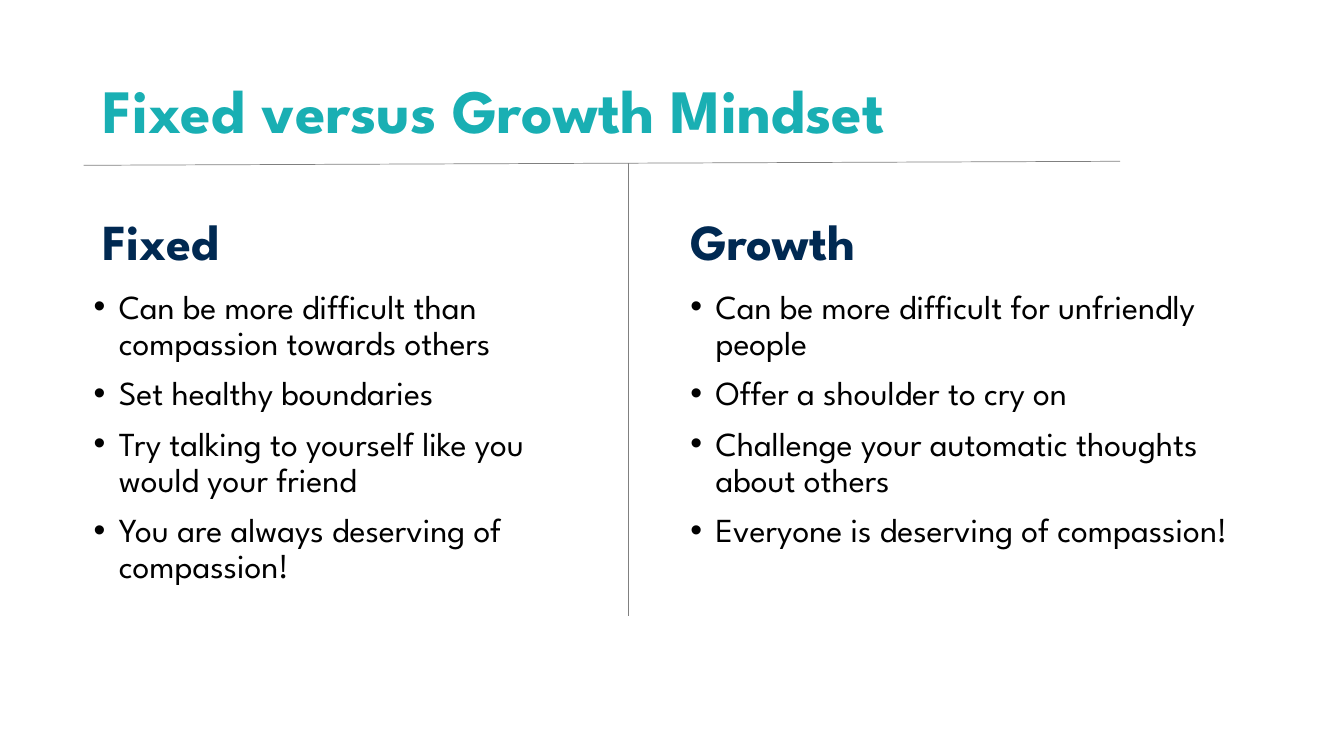
from dataclasses import dataclass

from lxml.etree import SubElement
from pptx import Presentation
from pptx.dml.color import RGBColor
from pptx.enum.shapes import MSO_CONNECTOR
from pptx.enum.text import MSO_ANCHOR
from pptx.oxml.ns import qn
from pptx.slide import Slide
from pptx.util import Inches, Pt

TEAL = RGBColor(0x19, 0xAF, 0xB3)
NAVY = RGBColor(0x00, 0x29, 0x52)
BLACK = RGBColor(0x00, 0x00, 0x00)
GRAY = RGBColor(0x80, 0x80, 0x80)
FONT = "League Spartan"
INDENT = Inches(0.25)

TITLE = {"size": Pt(44), "bold": True}
HEADING = {"size": Pt(36), "bold": True}
BODY = {"size": Pt(24), "bold": False}


@dataclass
class TextBlock:
    box: tuple[float, float, float, float]
    lines: list[str]
    font: dict
    color: RGBColor
    anchor: MSO_ANCHOR
    space_before: float = 10
    bulleted: bool = False


@dataclass
class Rule:
    start: tuple[float, float]
    end: tuple[float, float]


BLOCKS = [
    TextBlock((0.92, 0.4, 11.5, 1.45), ["Fixed versus Growth Mindset"],
              TITLE, TEAL, MSO_ANCHOR.MIDDLE, space_before=0),
    TextBlock((0.92, 1.84, 5.64, 0.9), ["Fixed"], HEADING, NAVY, MSO_ANCHOR.BOTTOM),
    TextBlock((0.83, 2.83, 5.06, 3.29), [
        "Can be more difficult than compassion towards others",
        "Set healthy boundaries",
        "Try talking to yourself like you would your friend",
        "You are always deserving of compassion!",
    ], BODY, BLACK, MSO_ANCHOR.TOP, bulleted=True),
    TextBlock((6.75, 1.84, 5.67, 0.9), ["Growth"], HEADING, NAVY, MSO_ANCHOR.BOTTOM),
    TextBlock((6.75, 2.83, 5.67, 3.2), [
        "Can be more difficult for unfriendly people",
        "Offer a shoulder to cry on",
        "Challenge your automatic thoughts about others",
        "Everyone is deserving of compassion!",
    ], BODY, BLACK, MSO_ANCHOR.TOP, bulleted=True),
]

RULES = [
    Rule((6.23, 1.62), (6.23, 6.11)),
    Rule((0.83, 1.64), (11.11, 1.6)),
]


def add_text(s: Slide, block: TextBlock) -> None:
    tf = s.shapes.add_textbox(*map(Inches, block.box)).text_frame
    tf.word_wrap = True
    tf.vertical_anchor = block.anchor
    for i, line in enumerate(block.lines):
        p = tf.add_paragraph() if i else tf.paragraphs[0]
        p.line_spacing = 0.9
        p.space_before = Pt(block.space_before)
        if block.bulleted:
            pPr = p._p.get_or_add_pPr()
            pPr.set("marL", str(INDENT))
            pPr.set("indent", str(-INDENT))
            SubElement(pPr, qn("a:buFont")).set("typeface", "Arial")
            SubElement(pPr, qn("a:buChar")).set("char", "•")
        r = p.add_run()
        r.text = line
        for name, value in {"name": FONT, **block.font}.items():
            setattr(r.font, name, value)
        r.font.color.rgb = block.color


def add_rule(s: Slide, rule: Rule) -> None:
    sp = s.shapes.add_connector(
        MSO_CONNECTOR.STRAIGHT, *map(Inches, rule.start + rule.end))
    sp.line.color.rgb = GRAY
    sp.line.width = Pt(0.5)
    SubElement(sp._element.spPr, qn("a:effectLst"))


def main() -> None:
    prs = Presentation()
    prs.slide_width = Inches(13.33)
    prs.slide_height = Inches(7.5)
    s = prs.slides.add_slide(prs.slide_layouts[6])
    for block in BLOCKS:
        add_text(s, block)
    for rule in RULES:
        add_rule(s, rule)
    prs.save("out.pptx")


if __name__ == "__main__":
    main()
